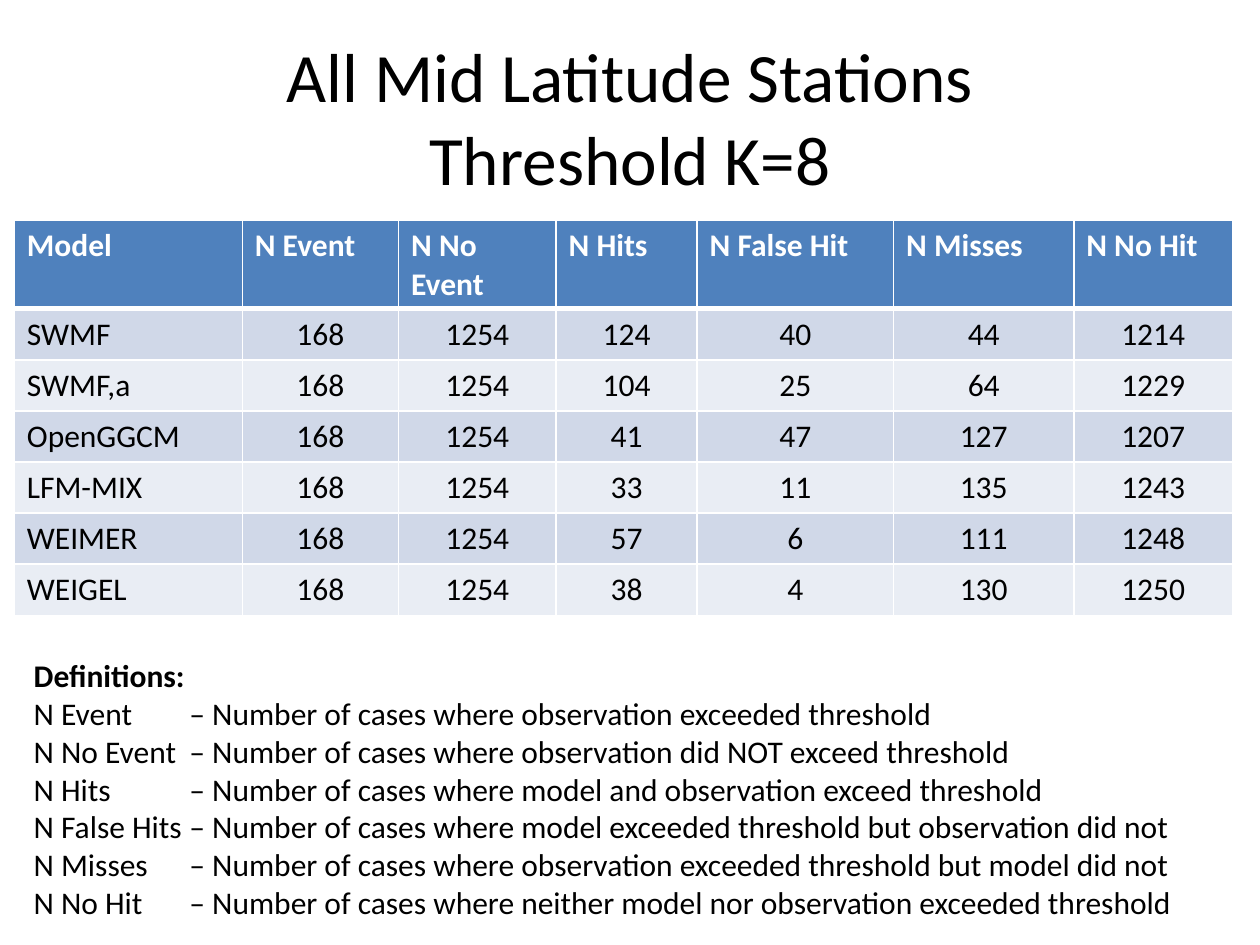
import pptx
import pptx.dml.color
import pptx.enum.text
import pptx.oxml
import pptx.oxml.ns
import pptx.util

Pt = pptx.util.Pt
ALIGN = pptx.enum.text.PP_ALIGN
FONT = "Calibri"
COLORS = {
    "text": "000000",
    "white": "FFFFFF",
    "header": "4F81BD",
    "odd": "D0D8E8",
    "even": "E9EDF4",
}
HEADINGS = ["Model", "N Event", "N No Event", "N Hits", "N False Hit", "N Misses", "N No Hit"]
EVENTS, NO_EVENTS = 168, 1254
SCORES = [
    ("SWMF", 124, 40, 44, 1214),
    ("SWMF,a", 104, 25, 64, 1229),
    ("OpenGGCM", 41, 47, 127, 1207),
    ("LFM-MIX", 33, 11, 135, 1243),
    ("WEIMER", 57, 6, 111, 1248),
    ("WEIGEL", 38, 4, 130, 1250),
]
COLUMN_WIDTHS = [130.3, 89.3, 90, 80.6, 112.3, 103, 90.7]
HEADER_HEIGHT, ROW_HEIGHT = 50.4, 29.2
DEFINITIONS = [
    ("N Event", "Number of cases where observation exceeded threshold"),
    ("N No Event", "Number of cases where observation did NOT exceed threshold"),
    ("N Hits", "Number of cases where model and observation exceed threshold"),
    ("N False Hits", "Number of cases where model exceeded threshold but observation did not"),
    ("N Misses", "Number of cases where observation exceeded threshold but model did not"),
    ("N No Hit", "Number of cases where neither model nor observation exceeded threshold"),
]
DASH_POSITION = 89


def rgb(name):
    """Return the named palette colour."""
    return pptx.dml.color.RGBColor.from_string(COLORS[name])


def style(paragraph, size, color="text", bold=False):
    """Set the font of a whole paragraph."""
    font = paragraph.font
    font.name, font.size, font.bold = FONT, Pt(size), bold
    font.color.rgb = rgb(color)


def add_title(slide, left, top, width, height):
    """Place the centred two-line title."""
    frame = slide.shapes.add_textbox(Pt(left), Pt(top), Pt(width), Pt(height)).text_frame
    frame.word_wrap = True
    frame.vertical_anchor = pptx.enum.text.MSO_ANCHOR.MIDDLE
    title = frame.paragraphs[0]
    title.text = "All Mid Latitude Stations\vThreshold K=8"
    title.alignment = ALIGN.CENTER
    style(title, 39.6)


def set_borders(cell, top, bottom):
    """Draw white borders around a cell."""
    properties = cell._tc.get_or_add_tcPr()
    for side, weight in (("L", 1), ("R", 1), ("T", top), ("B", bottom)):
        properties.append(pptx.oxml.parse_xml(
            f'<a:ln{side} {pptx.oxml.ns.nsdecls("a")} w="{Pt(weight)}"><a:solidFill>'
            f'<a:srgbClr val="{COLORS["white"]}"/></a:solidFill></a:ln{side}>'))


def add_scores(slide, left, top):
    """Place the table of model scores."""
    rows = [HEADINGS] + [(model, EVENTS, NO_EVENTS, *counts) for model, *counts in SCORES]
    height = HEADER_HEIGHT + ROW_HEIGHT * len(SCORES)
    scores = slide.shapes.add_table(
        len(rows), len(HEADINGS), Pt(left), Pt(top), Pt(sum(COLUMN_WIDTHS)), Pt(height)).table
    for column, width in zip(scores.columns, COLUMN_WIDTHS):
        column.width = Pt(width)
    for r, values in enumerate(rows):
        is_header = r == 0
        scores.rows[r].height = Pt(HEADER_HEIGHT if is_header else ROW_HEIGHT)
        fill = "header" if is_header else "odd" if r % 2 else "even"
        for c, value in enumerate(values):
            cell = scores.cell(r, c)
            set_borders(cell, 3 if r == 1 else 1, 3 if is_header else 1)
            cell.fill.solid()
            cell.fill.fore_color.rgb = rgb(fill)
            cell.text = str(value)
            entry = cell.text_frame.paragraphs[0]
            entry.alignment = ALIGN.LEFT if is_header or c == 0 else ALIGN.CENTER
            style(entry, 18, "white" if is_header else "text", is_header)


def add_definitions(slide, left, top, width, height):
    """Place the list of definitions with its dashes aligned on a tab stop."""
    frame = slide.shapes.add_textbox(Pt(left), Pt(top), Pt(width), Pt(height)).text_frame
    frame.word_wrap = False
    heading = frame.paragraphs[0]
    heading.text = "Definitions:"
    style(heading, 18, bold=True)
    for term, meaning in DEFINITIONS:
        definition = frame.add_paragraph()
        definition.text = f"{term}\t– {meaning}"
        definition._p.get_or_add_pPr().append(pptx.oxml.parse_xml(
            f'<a:tabLst {pptx.oxml.ns.nsdecls("a")}>'
            f'<a:tab pos="{Pt(DASH_POSITION)}" algn="l"/></a:tabLst>'))
        style(definition, 18)


def main():
    """Build and save the slide."""
    deck = pptx.Presentation()
    deck.slide_width, deck.slide_height = Pt(720), Pt(540)
    slide = deck.slides.add_slide(deck.slide_layouts[6])
    add_title(slide, 36, 21.6, 648, 90)
    add_scores(slide, 8.2, 126)
    add_definitions(slide, 12.2, 371.5, 671.8, 160)
    deck.save("out.pptx")


if __name__ == "__main__":
    main()
